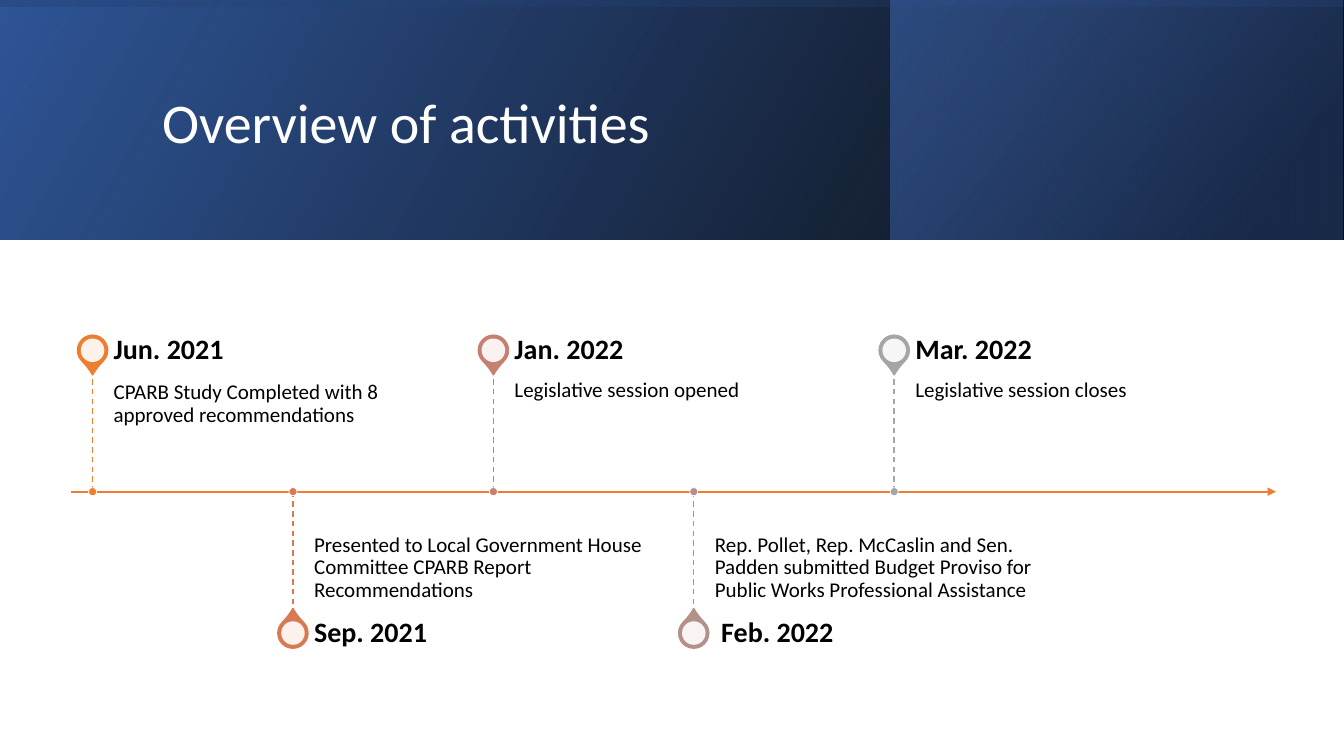
from dataclasses import dataclass

from lxml import etree
from pptx import Presentation
from pptx import util as u
from pptx.dml.color import RGBColor
from pptx.enum import dml, shapes, text
from pptx.oxml.ns import qn

Pt = u.Pt
SHAPE = shapes.MSO_SHAPE
ANCHOR = text.MSO_ANCHOR


@dataclass(frozen=True)
class Theme:
    font: str = "Calibri"
    title_size: int = 40
    date_size: int = 20
    body_size: int = 15
    white: str = "FFFFFF"
    black: str = "000000"
    axis: str = "ED7D31"
    blue: str = "2F5597"
    navy: str = "203864"
    sky: str = "4472C4"
    pins: tuple = ("ED7D31", "D87A51", "C48170", "B4908B", "A5A5A5")


class Deck:
    def __init__(self, prs, theme):
        self.theme = theme
        self.s = prs.slides.add_slide(prs.slide_layouts[6])

    def shape(self, kind, x, y, w, h, rotation=0):
        sp = self.s.shapes.add_shape(kind, Pt(x), Pt(y), Pt(w), Pt(h))
        sp.shadow.inherit = False
        sp.line.fill.background()
        sp.rotation = rotation
        return sp

    def set_alpha(self, sp, *percents):
        colors = sp._element.spPr.iter(qn("a:srgbClr"))
        for color, percent in zip(colors, percents):
            etree.SubElement(color, qn("a:alpha"), val=str(percent * 1000))

    def gradient(self, x, y, w, h, stops, angle, rotation=0):
        sp = self.shape(SHAPE.RECTANGLE, x, y, w, h, rotation)
        sp._element.spPr.get_or_add_xfrm().set("flipH", "1")
        sp.fill.gradient()
        sp.fill.gradient_angle = angle
        for stop, (position, color, _) in zip(sp.fill.gradient_stops, stops):
            stop.position = position
            stop.color.rgb = RGBColor.from_string(color)
        self.set_alpha(sp, *(alpha for _, _, alpha in stops))

    def solid(self, kind, cx, cy, size, color, outline=None, width=1, rotation=0):
        """Square shape centred on (cx, cy)."""
        sp = self.shape(kind, cx - size / 2, cy - size / 2, size, size, rotation)
        sp.fill.solid()
        sp.fill.fore_color.rgb = RGBColor.from_string(color)
        if outline:
            sp.line.color.rgb = RGBColor.from_string(outline)
            sp.line.width = Pt(width)
        return sp

    def line(self, x1, y1, x2, y2, color, width, dashed=False, arrow=False):
        cx = self.s.shapes.add_connector(
            shapes.MSO_CONNECTOR.STRAIGHT, Pt(x1), Pt(y1), Pt(x2), Pt(y2))
        cx.line.color.rgb = RGBColor.from_string(color)
        cx.line.width = Pt(width)
        if dashed:
            cx.line.dash_style = dml.MSO_LINE.DASH
        if arrow:
            etree.SubElement(cx.line._get_or_add_ln(), qn("a:tailEnd"), type="triangle")
        etree.SubElement(cx._element.spPr, qn("a:effectLst"))

    def text(self, x, y, w, h, words, size, color, anchor, insets, bold=False):
        tf = self.s.shapes.add_textbox(Pt(x), Pt(y), Pt(w), Pt(h)).text_frame
        tf.word_wrap = True
        tf.vertical_anchor = anchor
        tf.margin_left, tf.margin_top, tf.margin_right, tf.margin_bottom = map(Pt, insets)
        tf.text = words
        p = tf.paragraphs[0]
        p.line_spacing = 0.9
        r = p.runs[0]
        r.font.name = self.theme.font
        r.font.size = Pt(size)
        r.font.bold = bold
        r.font.color.rgb = RGBColor.from_string(color)

    def event(self, x, axis_y, above, color, date, body, date_indent):
        t = self.theme
        side = -1 if above else 1
        stem, date_h, text_w = 86, 30, 238.5
        pin_y = axis_y + side * 101
        text_x = x + 15.1

        # Pin
        pin = self.solid(SHAPE.TEAR, x, pin_y, 21.6, color, color,
                         rotation=135 if above else 315)
        pin.adjustments[0] = 1.15
        hole = self.solid(SHAPE.OVAL, x, pin_y, 16.8, t.white)
        self.set_alpha(hole, 90)

        # Description and date
        body_y = axis_y - stem if above else axis_y
        date_y = axis_y - stem - date_h if above else axis_y + stem
        self.text(text_x, body_y, text_w, stem, body, t.body_size, t.black,
                  ANCHOR.TOP if above else ANCHOR.BOTTOM,
                  (0, 7.2, 7.2, 11.5) if above else (0, 11.5, 0, 7.2))
        self.text(text_x, date_y, text_w, date_h, date, t.date_size, t.black,
                  ANCHOR.MIDDLE, (date_indent, 0, 10, 0), bold=True)

        # Stem and axis dot
        self.line(x, axis_y, x, axis_y + side * stem, color, 1, dashed=True)
        self.solid(SHAPE.OVAL, x, axis_y, 5.8, color, t.white, 0.5)


EVENTS = [  # date, description, date indent
    ("Jun. 2021", "CPARB Study Completed with 8 approved recommendations", 0),
    ("Sep. 2021", "Presented to Local Government House Committee CPARB Report "
                  "Recommendations", 0),
    ("Jan. 2022", "Legislative session opened", 0),
    ("Feb. 2022", "Rep. Pollet, Rep. McCaslin and Sen. Padden submitted Budget "
                  "Proviso for Public Works Professional Assistance", 4.5),
    ("Mar. 2022", "Legislative session closes", 0),
]


def main():
    prs = Presentation()
    width, band_h = 960, 170.8
    prs.slide_width, prs.slide_height = Pt(width), Pt(540)
    t = Theme()
    deck = Deck(prs, t)

    # Header band
    deck.gradient(0, 0, width, band_h, [(0, t.black, 96), (1, t.blue, 100)], 30)
    deck.gradient(636.2, 0, 323, band_h, [(0.19, t.navy, 68), (1, t.sky, 48)], 40)
    deck.gradient((width - band_h) / 2, (band_h - width) / 2, band_h, width,
                  [(0.23, t.blue, 16), (0.99, t.black, 45)], 10, rotation=270)
    deck.text(108.7, 27.4, 765.4, 123.8, "Overview of activities", t.title_size,
              t.white, ANCHOR.MIDDLE, (7.2, 3.6, 7.2, 3.6))

    # Timeline, events alternating above and below the axis
    axis_y, first_x, step = 351.2, 66.1, 143.15
    deck.line(50.4, axis_y, 911.5, axis_y, t.axis, 1.5, arrow=True)
    for i, (date, body, indent) in enumerate(EVENTS):
        deck.event(first_x + i * step, axis_y, i % 2 == 0, t.pins[i], date, body, indent)

    prs.save("out.pptx")


if __name__ == "__main__":
    main()
